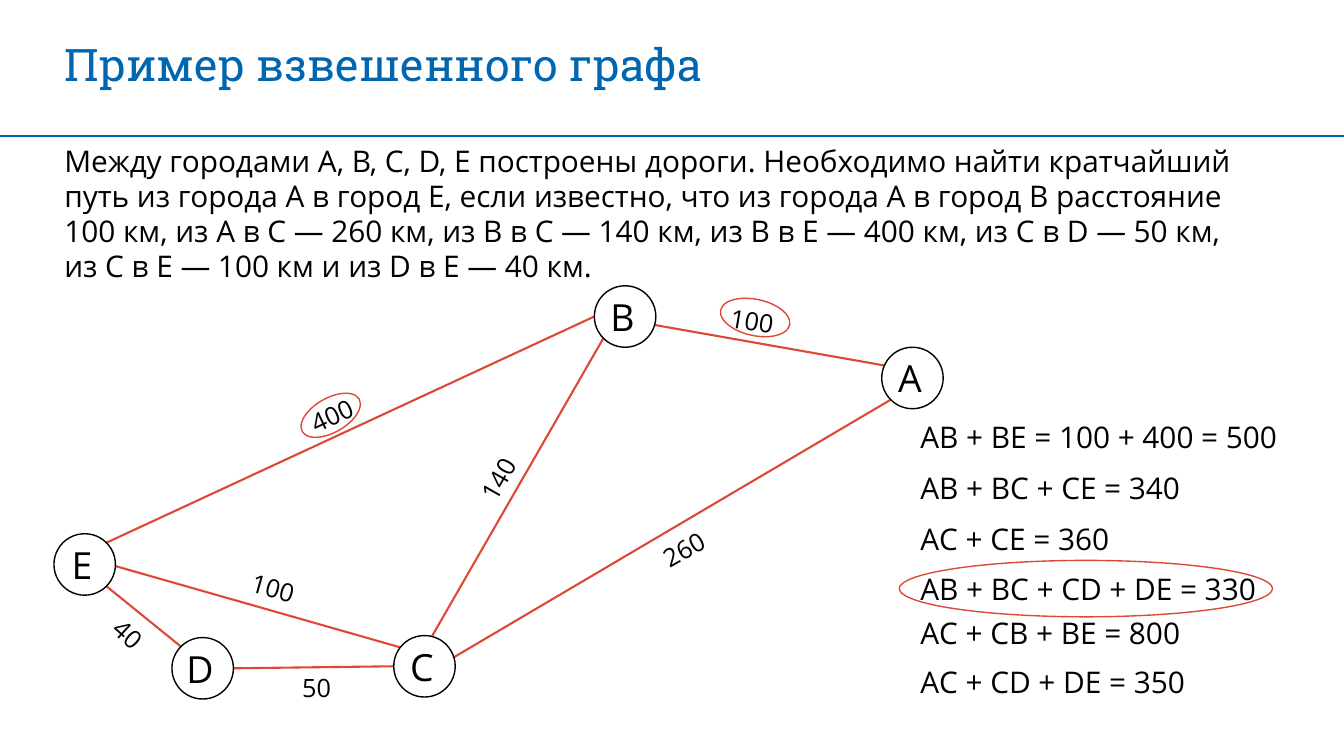
from math import cos, radians, sin

from lxml.etree import SubElement
from pptx import Presentation
from pptx.dml.color import RGBColor
from pptx.enum.shapes import MSO_CONNECTOR, MSO_SHAPE
from pptx.enum.text import MSO_ANCHOR, PP_ALIGN
from pptx.oxml.ns import qn
from pptx.util import Inches, Pt

BLUE = RGBColor(0x00, 0x66, 0xB0)
RED = RGBColor(0xDD, 0x49, 0x35)
BLACK = RGBColor(0, 0, 0)
BODY_FONT, TITLE_FONT = "Open Sans", "Roboto Slab"
BODY_SIZE, CITY_SIZE, WEIGHT_SIZE, TITLE_SIZE = 21.3, 26.7, 18, 32

SLIDE_W, SLIDE_H = 13.33, 7.5
LEFT, CONTENT_W = 0.54, 12.27
RULE_Y = 1.35
RADIUS = 0.305

TITLE = "Пример взвешенного графа"
TASK = (
    "Между городами A, B, C, D, E построены дороги. Необходимо найти кратчайший\v"
    "путь из города А в город Е, если известно, что из города А в город В расстояние\v"
    "100 км, из А в С — 260 км, из В в С — 140 км, из В в Е — 400 км, из С в D — 50 км,\v"
    "из C в E — 100 км и из D в Е — 40 км."
)

# City: letter and centre of its circle
CITIES = {
    "A": ("А", 9.05, 3.75),
    "B": ("В", 6.2, 3.14),
    "C": ("С", 4.21, 6.61),
    "D": ("D", 2.01, 6.63),
    "E": ("E", 0.84, 5.6),
}
# Road: city and angle where it leaves the circle (clockwise from the right), twice
ROADS = [
    ("B", 16, "A", 204),
    ("C", -17, "A", 135),
    ("D", 0, "C", 180),
    ("E", 45, "D", 225),
    ("E", -45, "B", 180),
    ("B", 135, "C", -76),
    ("E", 3, "C", 218),
]
# Distance, centre of the label, rotation
DISTANCES = [
    ("100", 7.46, 3.18, 9.3),
    ("260", 6.78, 5.45, -29.3),
    ("140", 4.94, 4.75, -60.4),
    ("50", 3.14, 6.82, 0),
    ("400", 3.29, 4.12, -25.2),
    ("100", 2.71, 5.83, 15.7),
    ("40", 1.27, 6.29, 42.5),
]
ROUTES_LEFT = 9.03
ROUTES = [
    (4.1, "АВ + ВЕ = 100 + 400 = 500"),
    (4.61, "АВ + ВС + СЕ = 340"),
    (5.11, "АС + СЕ = 360"),
    (5.61, "АВ + ВС + CD + DE = 330"),
    (6.05, "АC + CB + BE = 800"),
    (6.53, "АC + CD + DE = 350"),
]
# Red ovals: centre, width, height, rotation
HIGHLIGHTS = [
    (7.49, 3.15, 0.7, 0.36, 12.2),
    (3.28, 4.12, 0.65, 0.34, -29.8),
    (10.77, 5.84, 3.7, 0.56, 0),
]

prs = Presentation()
prs.slide_width, prs.slide_height = Inches(SLIDE_W), Inches(SLIDE_H)
slide = prs.slides.add_slide(prs.slide_layouts[5])
shapes = slide.shapes


def write(shape, text, size, font=BODY_FONT, color=BLACK, align=PP_ALIGN.LEFT):
    frame = shape.text_frame
    frame.word_wrap = True
    frame.vertical_anchor = MSO_ANCHOR.MIDDLE
    frame.text = text
    paragraph = frame.paragraphs[0]
    paragraph.alignment = align
    paragraph.font.size, paragraph.font.name = Pt(size), font
    paragraph.font.color.rgb = color
    return frame


def add_text(text, left, top, width, height, size, align=PP_ALIGN.LEFT):
    box = shapes.add_textbox(*map(Inches, (left, top, width, height)))
    write(box, text, size, align=align)
    return box


def add_line(start, end, color, width):
    line = shapes.add_connector(MSO_CONNECTOR.STRAIGHT, *map(Inches, start + end))
    line.line.color.rgb, line.line.width = color, Pt(width)
    SubElement(line._element.spPr, qn("a:effectLst"))


def add_oval(x, y, width, height, color, rotation=0):
    """Unfilled oval around the centre (x, y)."""
    oval = shapes.add_shape(
        MSO_SHAPE.OVAL, *map(Inches, (x - width / 2, y - height / 2, width, height)))
    oval.shadow.inherit = False
    oval.fill.background()
    oval.line.color.rgb, oval.line.width = color, Pt(1)
    oval.rotation = rotation
    return oval


def rim(city, angle):
    """Point on the city's circle at the given angle."""
    _, x, y = CITIES[city]
    return x + RADIUS * cos(radians(angle)), y + RADIUS * sin(radians(angle))


title = shapes.title
title.left, title.top, title.width, title.height = map(
    Inches, (LEFT, 0.31, CONTENT_W, 0.64))
write(title, TITLE, TITLE_SIZE, TITLE_FONT, BLUE)
add_line((0, RULE_Y), (SLIDE_W, RULE_Y), BLUE, 1)

task = add_text(TASK, LEFT, 1.38, CONTENT_W, 1.48, BODY_SIZE)
task.text_frame.vertical_anchor = MSO_ANCHOR.TOP
task.text_frame.paragraphs[0].line_spacing = Pt(24.8)

for start, start_angle, end, end_angle in ROADS:
    add_line(rim(start, start_angle), rim(end, end_angle), RED, 1.5)

for letter, x, y in CITIES.values():
    circle = add_oval(x, y, 2 * RADIUS, 2 * RADIUS, BLACK)
    label = write(circle, letter, CITY_SIZE, align=PP_ALIGN.CENTER)
    label.margin_left = label.margin_top = label.margin_bottom = 0
    label.margin_right = Inches(0.05)

for distance, x, y, rotation in DISTANCES:
    label = add_text(distance, x - 0.32, y - 0.2, 0.64, 0.4, WEIGHT_SIZE, PP_ALIGN.CENTER)
    label.rotation = rotation

for top, route in ROUTES:
    add_text(route, ROUTES_LEFT, top, 3.85, 0.46, BODY_SIZE)

for x, y, width, height, rotation in HIGHLIGHTS:
    add_oval(x, y, width, height, RED, rotation)

prs.save("out.pptx")
